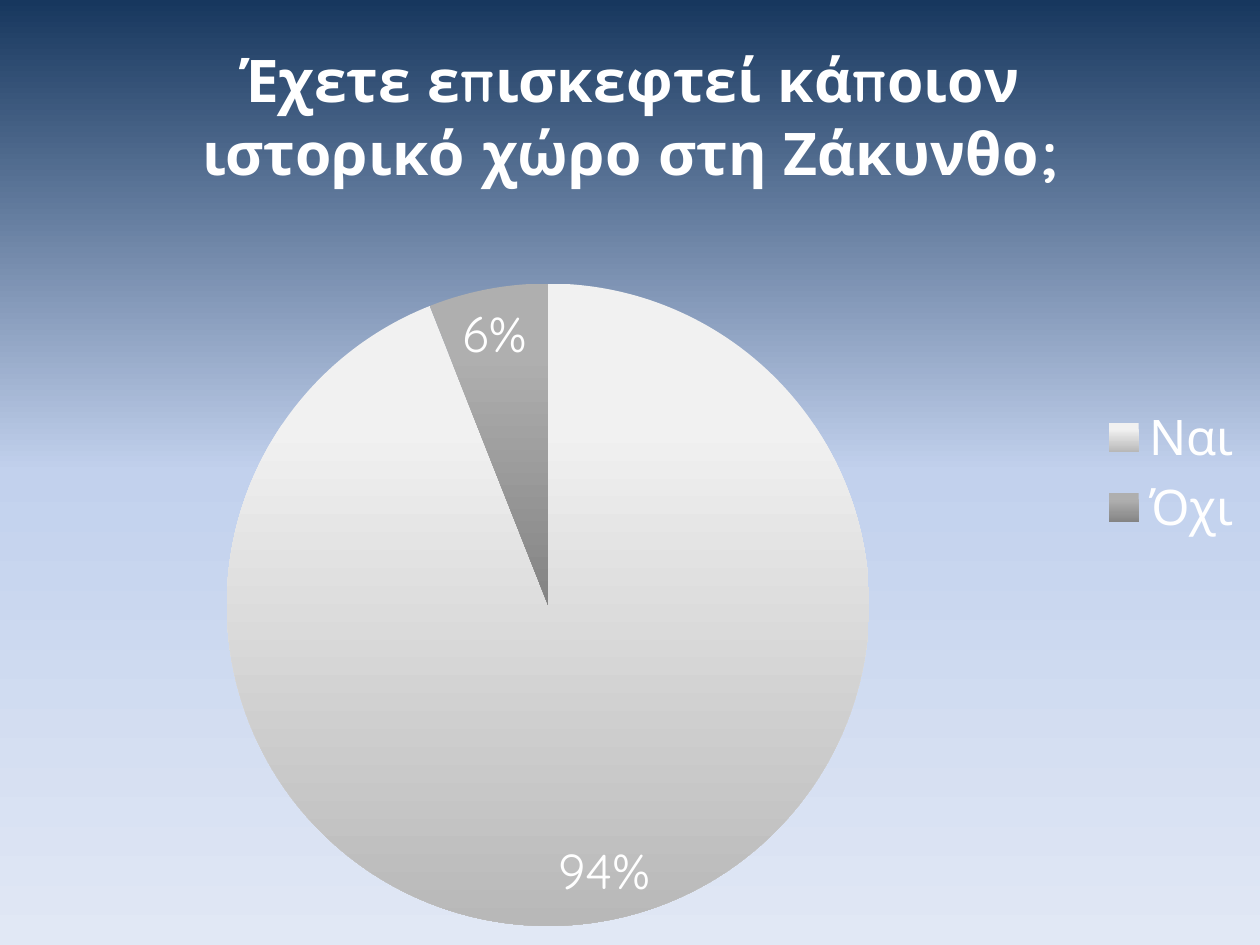
from lxml import etree
from pptx import Presentation
from pptx.chart.data import CategoryChartData
from pptx.dml.color import RGBColor
from pptx.enum.chart import XL_CHART_TYPE, XL_LABEL_POSITION, XL_LEGEND_POSITION
from pptx.oxml import parse_xml
from pptx.oxml.ns import nsdecls, qn
from pptx.util import Inches, Pt

PIE = XL_CHART_TYPE.PIE
RIGHT = XL_LEGEND_POSITION.RIGHT
BEST_FIT = XL_LABEL_POSITION.BEST_FIT

FONT = "Quicksand"
WHITE = "FFFFFF"
SKY = [(0, "17375E"), (50, "C2D1ED"), (100, "E1E8F5")]
SLICES = [
    [(0, "F1F1F1"), (22, "F1F1F1"), (100, "B8B8B8")],
    [(0, "AFAFAF"), (22, "AFAFAF"), (100, "848484")],
]
PLOT_SHARES = {"x": 0.18, "y": 0.3, "w": 0.51, "h": 0.68}


def color(value):
    return RGBColor.from_string(value)


def gradient(stops):
    stop_xml = "".join(
        f'<a:gs pos="{share * 1000}"><a:srgbClr val="{value}"/></a:gs>'
        for share, value in stops
    )
    return parse_xml(
        f'<a:gradFill {nsdecls("a")} rotWithShape="1"><a:gsLst>{stop_xml}</a:gsLst>'
        '<a:lin ang="5400000" scaled="0"/></a:gradFill>'
    )


class SlideBuilder:
    def __init__(self, presentation):
        self.presentation = presentation
        self.slide = presentation.slides.add_slide(presentation.slide_layouts[6])

    def style(self, font, size, bold=False):
        values = {"name": FONT, "size": Pt(size), "bold": bold}
        for name, value in values.items():
            setattr(font, name, value)
        font.color.rgb = color(WHITE)

    def pie(self, title, categories, values, left, top, width, height):
        data = CategoryChartData()
        data.categories = categories
        data.add_series("Series 1", values)
        slide_width = self.presentation.slide_width
        slide_height = self.presentation.slide_height
        chart = self.slide.shapes.add_chart(
            PIE,
            int(left * slide_width), int(top * slide_height),
            int(width * slide_width), int(height * slide_height),
            data,
        ).chart
        self.style(chart.font, 28)
        self.title(chart, title)
        self.legend(chart)
        self.labels(chart.plots[0])
        self.fill_slices(chart)
        self.background(chart)
        self.place_plot(chart)

    def title(self, chart, text):
        chart.has_title = True
        paragraph = chart.chart_title.text_frame.paragraphs[0]
        run = paragraph.add_run()
        run.text = text
        self.style(run.font, 33.6, bold=True)
        chart.chart_title.include_in_layout = False

    def legend(self, chart):
        chart.has_legend = True
        for name, value in {"position": RIGHT, "include_in_layout": False}.items():
            setattr(chart.legend, name, value)
        self.style(chart.legend.font, 28)

    def labels(self, plot):
        plot.vary_by_categories = True
        plot.has_data_labels = True
        values = {
            "show_percentage": True,
            "show_value": False,
            "number_format": "0%",
            "number_format_is_linked": False,
            "position": BEST_FIT,
        }
        for name, value in values.items():
            setattr(plot.data_labels, name, value)
        self.style(plot.data_labels.font, 28)

    def fill_slices(self, chart):
        series = chart.plots[0].series[0]
        for index, stops in enumerate(SLICES):
            point_format = series.points[index].format
            point_format.line.fill.background()
            point_format.fill.solid()
            solid = next(series._element.findall(qn("c:dPt"))[index].iter(qn("a:solidFill")))
            solid.getparent().replace(solid, gradient(stops))

    def background(self, chart):
        properties = parse_xml(
            f'<c:spPr {nsdecls("c", "a")}><a:ln><a:noFill/></a:ln></c:spPr>'
        )
        properties.insert(0, gradient(SKY))
        chart._chartSpace.find(qn("c:chart")).addnext(properties)
        rounded = chart._chartSpace.find(qn("c:roundedCorners"))
        if rounded is not None:
            rounded.set("val", "0")

    def place_plot(self, chart):
        plot_area = chart._chartSpace.find(qn("c:chart")).find(qn("c:plotArea"))
        layout = plot_area.find(qn("c:layout"))
        if layout is None:
            layout = parse_xml(f'<c:layout {nsdecls("c")}/>')
            plot_area.insert(0, layout)
        manual = etree.SubElement(layout, qn("c:manualLayout"))
        settings = {"layoutTarget": "inner", "xMode": "edge", "yMode": "edge", **PLOT_SHARES}
        for name, value in settings.items():
            etree.SubElement(manual, qn(f"c:{name}")).set("val", str(value))


def main():
    presentation = Presentation()
    presentation.slide_width = Inches(10)
    presentation.slide_height = Inches(7.5)
    builder = SlideBuilder(presentation)
    builder.pie(
        "Έχετε επισκεφτεί κάποιον ιστορικό χώρο στη Ζάκυνθο;",
        ["Ναι", "Όχι"], [94, 6],
        left=0, top=0, width=1, height=1,
    )
    presentation.save("out.pptx")


if __name__ == "__main__":
    main()
